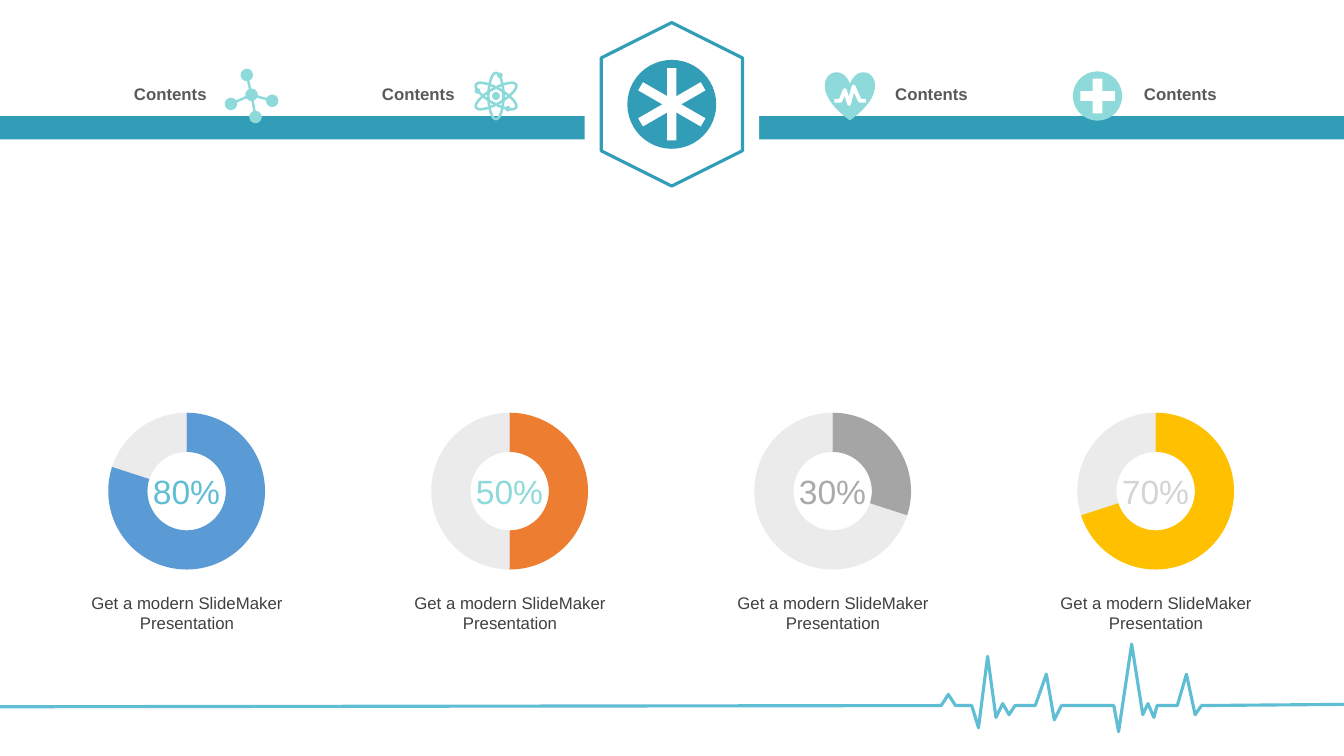
"""Build a medical slide with four doughnut dials below an icon banner."""
from math import atan2, cos, dist, pi, sin
from lxml import etree
from pptx import Presentation
from pptx.chart.data import CategoryChartData
from pptx.dml.color import RGBColor
from pptx.enum.chart import XL_CHART_TYPE
from pptx.enum.shapes import MSO_SHAPE
from pptx.enum.text import MSO_ANCHOR, PP_ALIGN
from pptx.oxml import parse_xml
from pptx.oxml.ns import nsdecls, qn
from pptx.util import Cm, Pt

RECT, OVAL, HEX = MSO_SHAPE.RECTANGLE, MSO_SHAPE.OVAL, MSO_SHAPE.HEXAGON
HEART, CROSS = MSO_SHAPE.HEART, MSO_SHAPE.CROSS
LEFT, MID, RIGHT = PP_ALIGN.LEFT, PP_ALIGN.CENTER, PP_ALIGN.RIGHT
TOP, CENTER, BOTTOM = MSO_ANCHOR.TOP, MSO_ANCHOR.MIDDLE, MSO_ANCHOR.BOTTOM
RING = XL_CHART_TYPE.DOUGHNUT

TEAL, MINT, SKY, WHITE = "319DB6", "8EDADA", "60BED4", "FFFFFF"
STEP = 8.14
BASE = 17.78


def color(code):
    return RGBColor.from_string(code)


def arc(mid, size, start, end, count=24):
    turns = [start + (end - start) * i / count for i in range(count + 1)]
    return [(mid[0] + size * cos(t), mid[1] + size * sin(t)) for t in turns]


class Board:
    def __init__(self, slide, font="Arial"):
        self.shapes = slide.shapes
        self.font = font

    def paint(self, shape, fill, line, width):
        shape.shadow.inherit = False
        if fill:
            shape.fill.solid()
            shape.fill.fore_color.rgb = color(fill)
        else:
            shape.fill.background()
        if line:
            shape.line.color.rgb = color(line)
            shape.line.width = Pt(width)
        else:
            shape.line.fill.background()

    def shape(self, kind, mid, size, fill=None, line=None, width=2.25, turn=0):
        (x, y), (w, h) = mid, size
        item = self.shapes.add_shape(kind, Cm(x - w / 2), Cm(y - h / 2), Cm(w), Cm(h))
        item.rotation = turn
        self.paint(item, fill, line, width)
        return item

    def dot(self, mid, size, fill):
        self.shape(OVAL, mid, (size, size), fill)

    def trace(self, points, fill=None, line=None, width=2.25):
        spots = [(Cm(x), Cm(y)) for x, y in points]
        pen = self.shapes.build_freeform(*spots[0])
        pen.add_line_segments(spots[1:], close=bool(fill))
        self.paint(pen.convert_to_shape(), fill, line, width)

    def text(self, words, box, size, code, align=MID, anchor=TOP, bold=False):
        frame = self.shapes.add_textbox(*[Cm(n) for n in box]).text_frame
        frame.word_wrap = True
        frame.vertical_anchor = anchor
        para = frame.paragraphs[0]
        para.text = words
        para.alignment = align
        para.font.name = self.font
        para.font.size = Pt(size)
        para.font.bold = bold
        para.font.color.rgb = color(code)

    def ring(self, share, box, code):
        data = CategoryChartData()
        data.categories = ["1", "2"]
        data.add_series("Series 1", (share, 100 - share))
        chart = self.shapes.add_chart(RING, *[Cm(n) for n in box], data).chart
        chart.has_legend = chart.has_title = False
        chart.font.name, chart.font.size = "Calibri", Pt(18)
        chart.font.color.rgb = color("000000")
        plot = chart.plots[0]
        plot.vary_by_categories = True
        for i, tint in enumerate((code, "BEBFBF")):
            look = plot.series[0].points[i].format
            look.fill.solid()
            look.fill.fore_color.rgb = color(tint)
            look.line.fill.background()
        rest = plot.series[0].points[1].format.fill._xPr.find(".//" + qn("a:srgbClr"))
        etree.SubElement(rest, qn("a:alpha")).set("val", "30000")
        root = chart._chartSpace
        root.find(".//" + qn("c:holeSize")).set("val", "75")
        area = root.find(".//" + qn("c:plotArea"))
        for old in area.findall(qn("c:layout")):
            area.remove(old)
        spots = {"x": 0.03, "y": 0.098, "w": 0.949, "h": 0.841}
        tags = '<c:layoutTarget val="inner"/><c:xMode val="edge"/><c:yMode val="edge"/>'
        tags += "".join(f'<c:{k} val="{v}"/>' for k, v in spots.items())
        area.insert(0, parse_xml(
            f'<c:layout {nsdecls("c")}><c:manualLayout>{tags}</c:manualLayout></c:layout>'))

    def dial(self, x, share, fill, code):
        self.dot((x - 0.04, 12.38), 4.39, WHITE)
        self.ring(share, (x - 2.16, 9.94, 4.29, 4.7), fill)
        self.text(f"{share}%", (x - 1.12, 11.74, 2.24, 1.27), 24, code, anchor=BOTTOM)
        self.text("Get a modern SlideMaker Presentation",
                  (x - 2.78, 14.81, 5.59, 1.27), 12, "404040")

    def badge(self):
        mid = (16.93, 2.63)
        self.shape(HEX, mid, (5.1, 4.4), WHITE, turn=90)
        self.shape(HEX, mid, (4.12, 3.56), WHITE, TEAL, turn=90)
        self.dot(mid, 2.24, TEAL)
        for turn in (0, 60, 120):
            self.shape(RECT, mid, (0.24, 1.82), WHITE, turn=turn)

    def cell(self):
        hub, size, gap = (6.34, 2.39), 0.155, 0.2
        nodes = ((6.86, 2.54), (6.44, 2.95), (5.82, 2.62), (6.22, 1.89))
        turns = [atan2(y - hub[1], x - hub[0]) % (2 * pi) for x, y in nodes]
        outline = []
        for i, (node, turn) in enumerate(zip(nodes, turns)):
            after = turns[i + 1] if i < 3 else turns[0] + 2 * pi
            outline += arc(node, size, turn - pi + gap, turn + pi - gap)
            outline += arc(hub, size, turn + gap, after - gap)
        self.trace(outline, fill=MINT)

    def atom(self):
        mid = (12.5, 2.42)
        for turn in (0, 60, 120):
            self.shape(OVAL, mid, (0.38, 1.17), line=MINT, width=1.8, turn=turn)
        self.dot(mid, 0.2, MINT)
        for spot in ((12.03, 2.29), (12.6, 1.9), (12.8, 2.74)):
            self.dot(spot, 0.14, MINT)

    def heart(self):
        self.shape(HEART, (21.42, 2.42), (1.26, 1.23), MINT)
        self.trace([(21.03, 2.54), (21.18, 2.54), (21.29, 2.27), (21.4, 2.62),
                    (21.51, 2.18), (21.67, 2.54), (21.82, 2.54)], line=WHITE, width=2.75)

    def plus(self):
        mid = (27.66, 2.42)
        self.dot(mid, 1.24, MINT)
        self.shape(CROSS, mid, (0.87, 0.87), WHITE).adjustments[0] = 0.36


def main():
    deck = Presentation()
    deck.slide_width, deck.slide_height = Cm(33.87), Cm(19.05)
    board = Board(deck.slides.add_slide(deck.slide_layouts[6]))
    board.shape(RECT, (16.94, 3.22), (33.88, 0.59), TEAL)
    board.trace([
        (33.87, 17.75), (30.28, BASE), (30.12, 18.01), (29.9, 16.99), (29.67, BASE),
        (29.16, BASE), (29.08, 18.08), (28.93, 17.73), (28.8, 18.01), (28.52, 16.23),
        (28.19, 18.44), (28.07, BASE), (26.75, BASE), (26.57, 18.14), (26.37, 16.99),
        (26.09, BASE), (25.58, BASE), (25.43, 18.01), (25.27, 17.73), (25.1, 18.08),
        (24.89, 16.54), (24.66, 18.34), (24.49, BASE), (24.08, BASE), (23.9, 17.5),
        (23.72, BASE), (0, 17.81)], line=SKY)
    dials = ((80, "5B9BD5", SKY), (50, "ED7D31", MINT),
             (30, "A5A5A5", "AAAAAA"), (70, "FFC000", "D4D4D4"))
    for i, (share, fill, code) in enumerate(dials):
        board.dial(4.7 + i * STEP, share, fill, code)
    for x, align in ((2.39, RIGHT), (8.64, RIGHT), (22.31, LEFT), (28.58, LEFT)):
        board.text("Contents", (x, 1.88, 3.07, 0.99), 12, "595959", align, CENTER, True)
    board.badge()
    board.cell()
    board.atom()
    board.heart()
    board.plus()
    deck.save("out.pptx")


if __name__ == "__main__":
    main()
